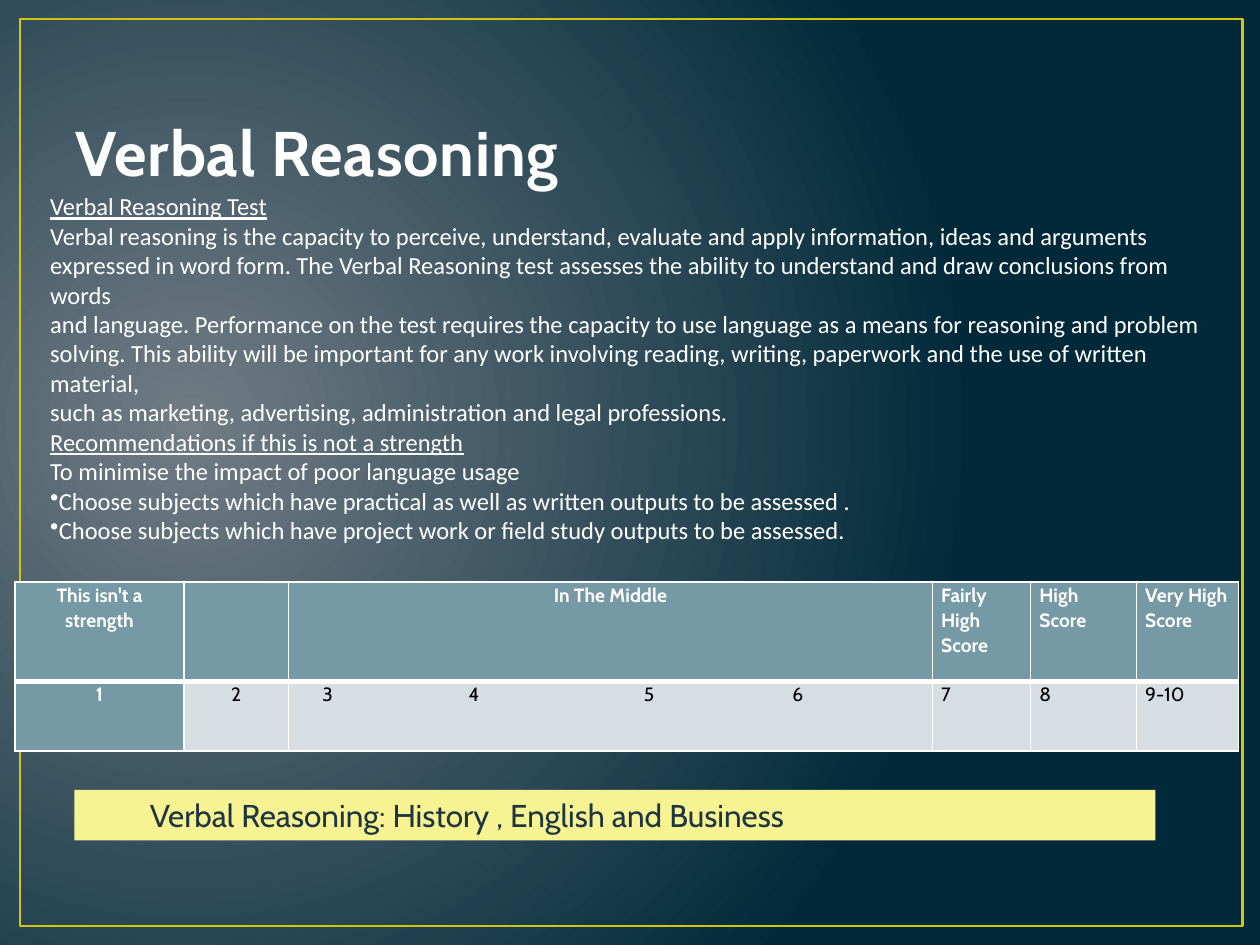
from dataclasses import dataclass

import pptx
import pptx.dml.color
import pptx.enum.shapes
import pptx.enum.text
import pptx.oxml
import pptx.oxml.ns
import pptx.util
from pptx.util import Inches

ALIGN = pptx.enum.text.PP_ALIGN
ANCHOR = pptx.enum.text.MSO_ANCHOR
RECT = pptx.enum.shapes.MSO_SHAPE.RECTANGLE
NS = pptx.oxml.ns.nsdecls("a")
qn = pptx.oxml.ns.qn


@dataclass(frozen=True)
class Theme:
    glow: str = "717C84"
    night: str = "01293A"
    frame: str = "CFC60D"
    title: str = "FEFEFE"
    title_edge: str = "384F55"
    white: str = "FFFFFF"
    black: str = "000000"
    header: str = "759AA5"
    score: str = "D6DEE1"
    banner: str = "F8F392"
    banner_text: str = "1D3641"
    heading_font: str = "Cabin"
    body_font: str = "Calibri"
    title_size: int = 36
    banner_size: int = 18
    body_size: int = 14
    table_size: int = 11


@dataclass(frozen=True)
class Line:
    text: str
    underline: bool = False
    bullet: bool = False


@dataclass(frozen=True)
class Band:
    width: float
    label: str
    score: str
    label_align: ALIGN = ALIGN.LEFT
    score_align: ALIGN = ALIGN.LEFT
    score_is_header: bool = False
    tabs: tuple[float, ...] = ()


T = Theme()

BODY = [
    Line("Verbal Reasoning Test", underline=True),
    Line("Verbal reasoning is the capacity to perceive, understand, evaluate and apply "
         "information, ideas and arguments"),
    Line("expressed in word form. The Verbal Reasoning test assesses the ability to "
         "understand and draw conclusions from words"),
    Line("and language. Performance on the test requires the capacity to use language "
         "as a means for reasoning and problem"),
    Line("solving. This ability will be important for any work involving reading, writing, "
         "paperwork and the use of written material,"),
    Line("such as marketing, advertising, administration and legal professions."),
    Line("Recommendations if this is not a strength", underline=True),
    Line("To minimise the impact of poor language usage"),
    Line("Choose subjects which have practical as well as written outputs to be assessed .",
         bullet=True),
    Line("Choose subjects which have project work or field study outputs to be assessed.",
         bullet=True),
]

BANDS = [
    Band(1.34, "This isn't a strength", "1", ALIGN.CENTER, ALIGN.CENTER, True),
    Band(0.83, "", "2", ALIGN.CENTER, ALIGN.CENTER),
    Band(5.11, "In The Middle", "\t3\t4\t5\t6", ALIGN.CENTER, tabs=(0.2, 1.36, 2.75, 3.93)),
    Band(0.78, "Fairly High Score", "7"),
    Band(0.84, "High Score", "8"),
    Band(0.81, "Very High Score", "9-10"),
]


def rgb(value: str) -> pptx.dml.color.RGBColor:
    return pptx.dml.color.RGBColor.from_string(value)


def line_xml(tag: str, color: str, points: float):
    width = pptx.util.Pt(points)
    return pptx.oxml.parse_xml(
        f'<a:{tag} {NS} w="{width}"><a:solidFill><a:srgbClr val="{color}"/>'
        f"</a:solidFill></a:{tag}>")


def add_run(p, text: str, size: float, font: str, color: str, bold: bool = False):
    r = p.add_run()
    r.text = text
    r.font.size = pptx.util.Pt(size)
    r.font.name = font
    r.font.bold = bold
    r.font.color.rgb = rgb(color)
    return r


def add_text_box(s, left: float, top: float, width: float, height: float, anchor):
    tf = s.shapes.add_textbox(
        Inches(left), Inches(top), Inches(width), Inches(height)).text_frame
    tf.word_wrap = True
    tf.vertical_anchor = anchor
    return tf


def add_rect(s, left: float, top: float, width: float, height: float):
    sp = s.shapes.add_shape(
        RECT, Inches(left), Inches(top), Inches(width), Inches(height))
    sp.shadow.inherit = False
    return sp


def paint_background(s) -> None:
    fill = s.background.fill
    fill.gradient()
    for stop, color in zip(fill.gradient_stops, (T.glow, T.night)):
        stop.color.rgb = rgb(color)
    grad = s.element.find(".//" + qn("a:gradFill"))
    grad.replace(grad.find(qn("a:lin")), pptx.oxml.parse_xml(
        f'<a:path {NS} path="circle">'
        '<a:fillToRect l="15000" t="50000" r="85000" b="60000"/></a:path>'))


def fill_cell(cell, text: str, align, is_header: bool, top: float, bottom: float,
              tabs: tuple[float, ...] = ()) -> None:
    cell.margin_left = cell.margin_right = Inches(0.07)
    cell.margin_top = cell.margin_bottom = 0
    p = cell.text_frame.paragraphs[0]
    p.alignment = align
    p.line_spacing = 1.07
    if tabs:
        stops = "".join(f'<a:tab pos="{Inches(pos)}" algn="l"/>' for pos in tabs)
        p._p.get_or_add_pPr().append(
            pptx.oxml.parse_xml(f"<a:tabLst {NS}>{stops}</a:tabLst>"))
    if text:
        add_run(p, text, T.table_size, T.heading_font,
                T.white if is_header else T.black, is_header)
    tc_pr = cell._tc.get_or_add_tcPr()
    for tag, points in (("lnL", 1), ("lnR", 1), ("lnT", top), ("lnB", bottom)):
        tc_pr.append(line_xml(tag, T.white, points))
    cell.fill.solid()
    cell.fill.fore_color.rgb = rgb(T.header if is_header else T.score)


def add_score_table(s) -> None:
    table = s.shapes.add_table(2, len(BANDS), Inches(0.12), Inches(4.62),
                               Inches(9.71), Inches(1.34)).table
    for row, height in zip(table.rows, (0.79, 0.55)):
        row.height = Inches(height)
    for i, band in enumerate(BANDS):
        table.columns[i].width = Inches(band.width)
        fill_cell(table.cell(0, i), band.label, band.label_align, True, 1, 3)
        fill_cell(table.cell(1, i), band.score, band.score_align,
                  band.score_is_header, 3, 1, band.tabs)


def main() -> None:
    prs = pptx.Presentation()
    prs.slide_width, prs.slide_height = Inches(10), Inches(7.5)
    s = prs.slides.add_slide(prs.slide_layouts[6])

    # Background and frame
    paint_background(s)
    frame = add_rect(s, 0.16, 0.15, 9.7, 7.2)
    frame.fill.background()
    frame.line.color.rgb = rgb(T.frame)
    frame.line.width = pptx.util.Pt(1.5)

    # Title
    tf = add_text_box(s, 0.5, 0.3, 9, 1.25, ANCHOR.BOTTOM)
    r = add_run(tf.paragraphs[0], "Verbal Reasoning", T.title_size,
                T.heading_font, T.title, True)
    r_pr = r._r.get_or_add_rPr()
    r_pr.set("spc", "50")
    r_pr.insert(0, line_xml("ln", T.title_edge, 1.05))

    # Score table
    add_score_table(s)

    # Description
    tf = add_text_box(s, 0.3, 1.47, 9.33, 3.16, ANCHOR.TOP)
    for i, line in enumerate(BODY):
        p = tf.add_paragraph() if i else tf.paragraphs[0]
        r = add_run(p, line.text, T.body_size, T.body_font, T.white)
        r.font.underline = line.underline
        if line.bullet:
            p._p.get_or_add_pPr().append(
                pptx.oxml.parse_xml(f'<a:buChar {NS} char="•"/>'))

    # Subject banner
    banner = add_rect(s, 0.59, 6.27, 8.58, 0.4)
    banner.fill.solid()
    banner.fill.fore_color.rgb = rgb(T.banner)
    banner.line.fill.background()
    tf = banner.text_frame
    tf.word_wrap = True
    tf.vertical_anchor = ANCHOR.TOP
    p = tf.paragraphs[0]
    p.alignment = ALIGN.LEFT
    add_run(p, "\tVerbal Reasoning: History , English and Business",
            T.banner_size, T.heading_font, T.banner_text)

    prs.save("out.pptx")


if __name__ == "__main__":
    main()
